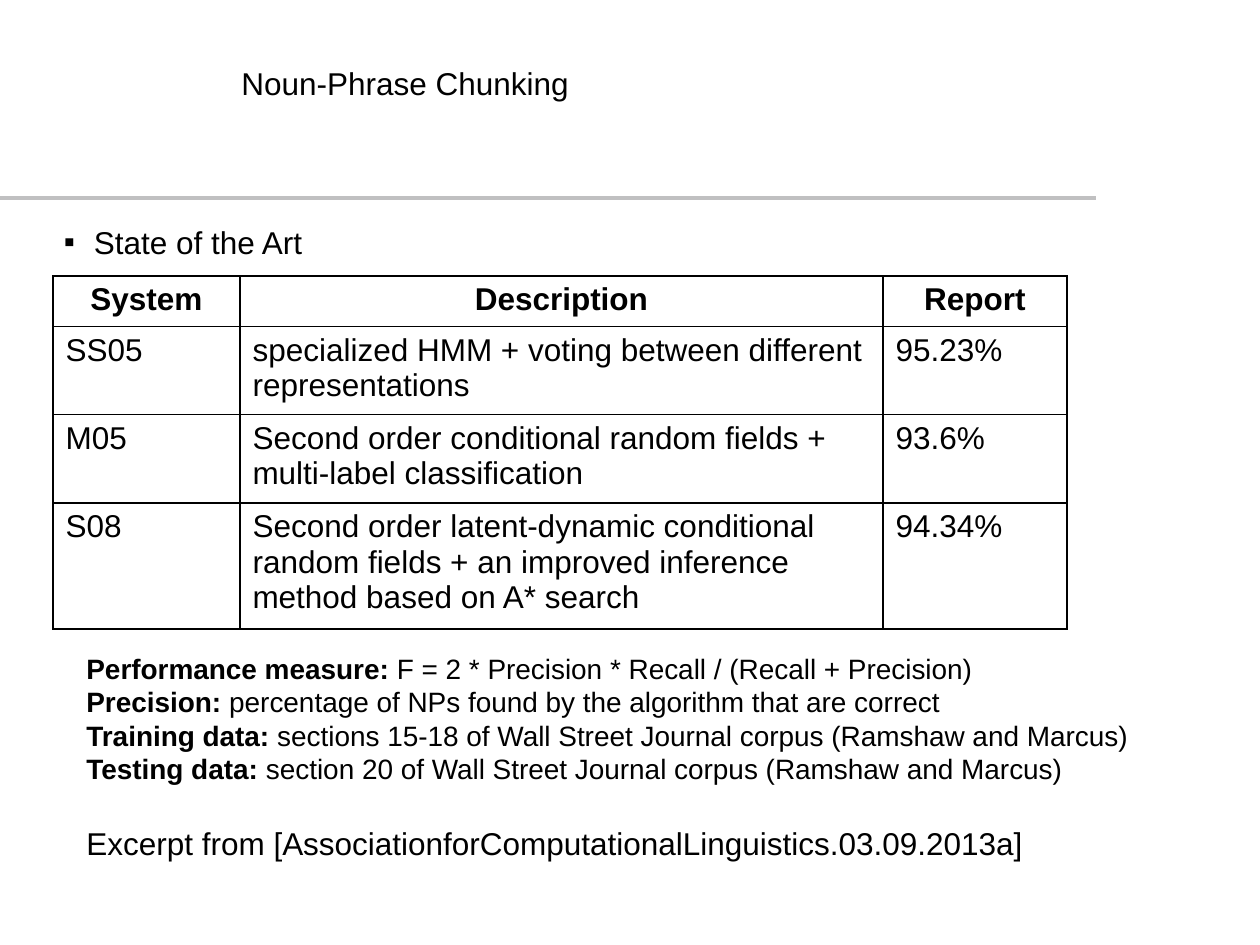
from lxml.etree import SubElement
from pptx import Presentation
from pptx.dml.color import RGBColor
from pptx.enum.shapes import MSO_CONNECTOR
from pptx.enum.text import MSO_ANCHOR, PP_ALIGN
from pptx.oxml import parse_xml
from pptx.oxml.ns import nsdecls, qn
from pptx.util import Pt

PX = 914400 / 126
FONT = "Arial"
COLORS = {"text": "000000", "rule": "C0C0C1", "border": "000000"}

TABLE_COLUMNS = (187, 643, 184)
TABLE_ROWS = (49, 83, 84, 119)
SYSTEMS = [
    ("System", "Description", "Report"),
    ("SS05", "specialized HMM + voting between different representations", "95.23%"),
    ("M05", "Second order conditional random fields + multi-label classification", "93.6%"),
    ("S08", "Second order latent-dynamic conditional random fields + an improved "
            "inference method based on A* search", "94.34%"),
]
NOTES = [
    ("Performance measure:", " F = 2 * Precision * Recall / (Recall + Precision)"),
    ("Precision:", " percentage of NPs found by the algorithm that are correct"),
    ("Training data:", " sections 15-18 of Wall Street Journal corpus (Ramshaw and Marcus)"),
    ("Testing data:", " section 20 of Wall Street Journal corpus (Ramshaw and Marcus)"),
]


def px(length):
    return round(length * PX)


def color(name):
    return RGBColor.from_string(COLORS[name])


def add_run(paragraph, text, size=18, bold=False):
    run = paragraph.add_run()
    run.text = text
    run.font.name = FONT
    run.font.size = Pt(size)
    run.font.bold = bold
    run.font.color.rgb = color("text")


def add_text_frame(slide, box):
    frame = slide.shapes.add_textbox(*map(px, box)).text_frame
    frame.word_wrap = True
    return frame


def add_title(slide, box, text):
    frame = add_text_frame(slide, box)
    frame.vertical_anchor = MSO_ANCHOR.MIDDLE
    add_run(frame.paragraphs[0], text)


def add_rule(slide, left, top, width):
    line = slide.shapes.add_connector(
        MSO_CONNECTOR.STRAIGHT, px(left), px(top), px(left + width), px(top))
    line.line.color.rgb = color("rule")
    line.line.width = Pt(2.25)
    SubElement(line._element.spPr, qn("a:effectLst"))


def add_bullet(slide, box, text, indent=30):
    frame = add_text_frame(slide, box)
    frame.margin_left = frame.margin_top = frame.margin_right = frame.margin_bottom = 0
    paragraph = frame.paragraphs[0]
    properties = paragraph._p.get_or_add_pPr()
    properties.set("marL", str(px(indent)))
    properties.set("indent", str(-px(indent)))
    SubElement(properties, qn("a:buFont")).set("typeface", FONT)
    SubElement(properties, qn("a:buChar")).set("char", "▪")
    add_run(paragraph, text)


def set_borders(cell):
    properties = cell._tc.get_or_add_tcPr()
    for position, side in enumerate(("lnL", "lnR", "lnT", "lnB")):
        properties.insert(position, parse_xml(
            f'<a:{side} {nsdecls("a")} w="{Pt(1)}"><a:solidFill>'
            f'<a:srgbClr val="{COLORS["border"]}"/></a:solidFill></a:{side}>'))


def add_systems_table(slide, left, top):
    table = slide.shapes.add_table(
        len(SYSTEMS), len(TABLE_COLUMNS), px(left), px(top),
        px(sum(TABLE_COLUMNS)), px(sum(TABLE_ROWS))).table
    table.horz_banding = False
    for column, width in zip(table.columns, TABLE_COLUMNS):
        column.width = px(width)
    for row_index, (row, height, texts) in enumerate(zip(table.rows, TABLE_ROWS, SYSTEMS)):
        row.height = px(height)
        is_header = row_index == 0
        for cell, text in zip(row.cells, texts):
            cell.fill.background()
            set_borders(cell)
            paragraph = cell.text_frame.paragraphs[0]
            paragraph.alignment = PP_ALIGN.CENTER if is_header else PP_ALIGN.LEFT
            add_run(paragraph, text, bold=is_header)


def add_notes_block(slide, box):
    frame = add_text_frame(slide, box)
    for index, (label, detail) in enumerate(NOTES):
        paragraph = frame.add_paragraph() if index else frame.paragraphs[0]
        add_run(paragraph, label, size=16, bold=True)
        add_run(paragraph, detail, size=16)


def add_excerpt(slide, box, text):
    add_run(add_text_frame(slide, box).paragraphs[0], text)


def main():
    presentation = Presentation()
    presentation.slide_width, presentation.slide_height = px(1260), px(945)
    slide = presentation.slides.add_slide(presentation.slide_layouts[6])
    add_rule(slide, 0, 198, 1096)
    add_title(slide, (229, 39, 867, 88), "Noun-Phrase Chunking")
    add_bullet(slide, (64, 223, 1032, 529), "State of the Art")
    add_systems_table(slide, 53, 276)
    add_excerpt(slide, (74, 818, 980, 50),
                "Excerpt from [AssociationforComputationalLinguistics.03.09.2013a]")
    add_notes_block(slide, (74, 645, 1080, 146))
    presentation.save("out.pptx")


if __name__ == "__main__":
    main()
